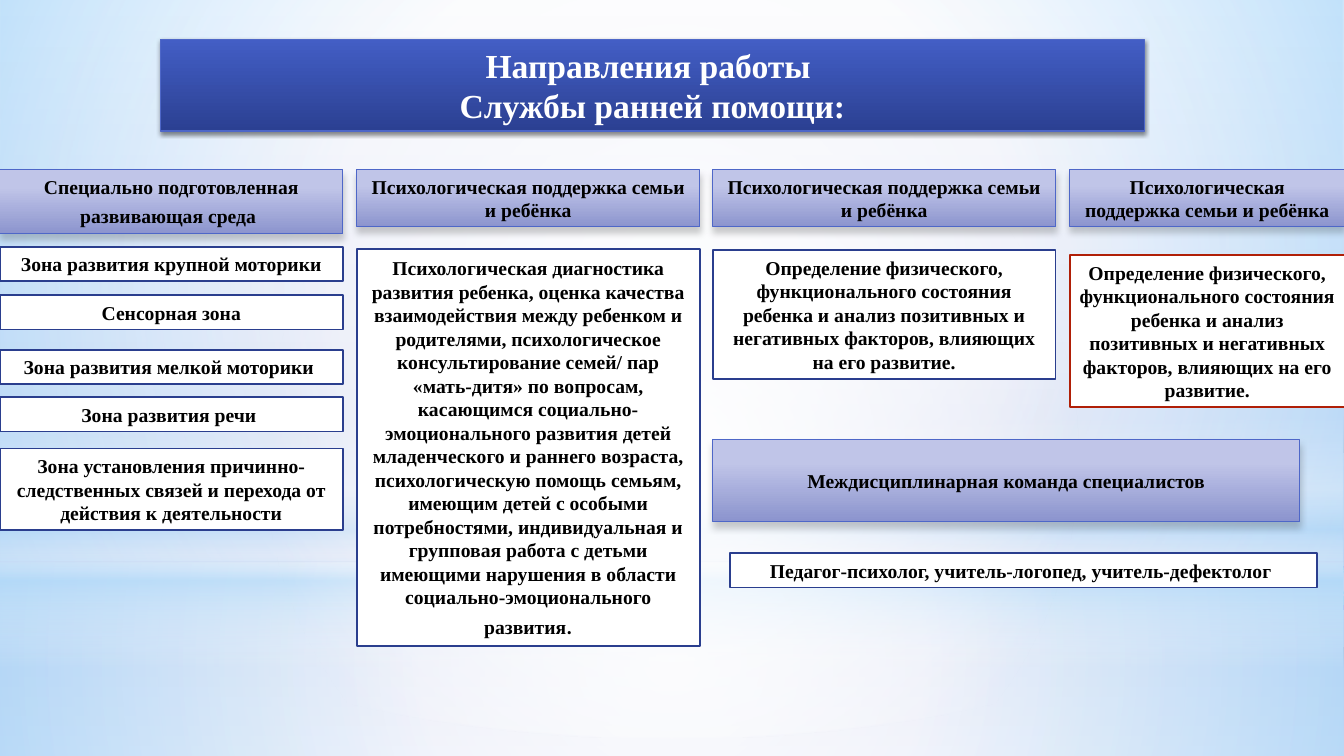
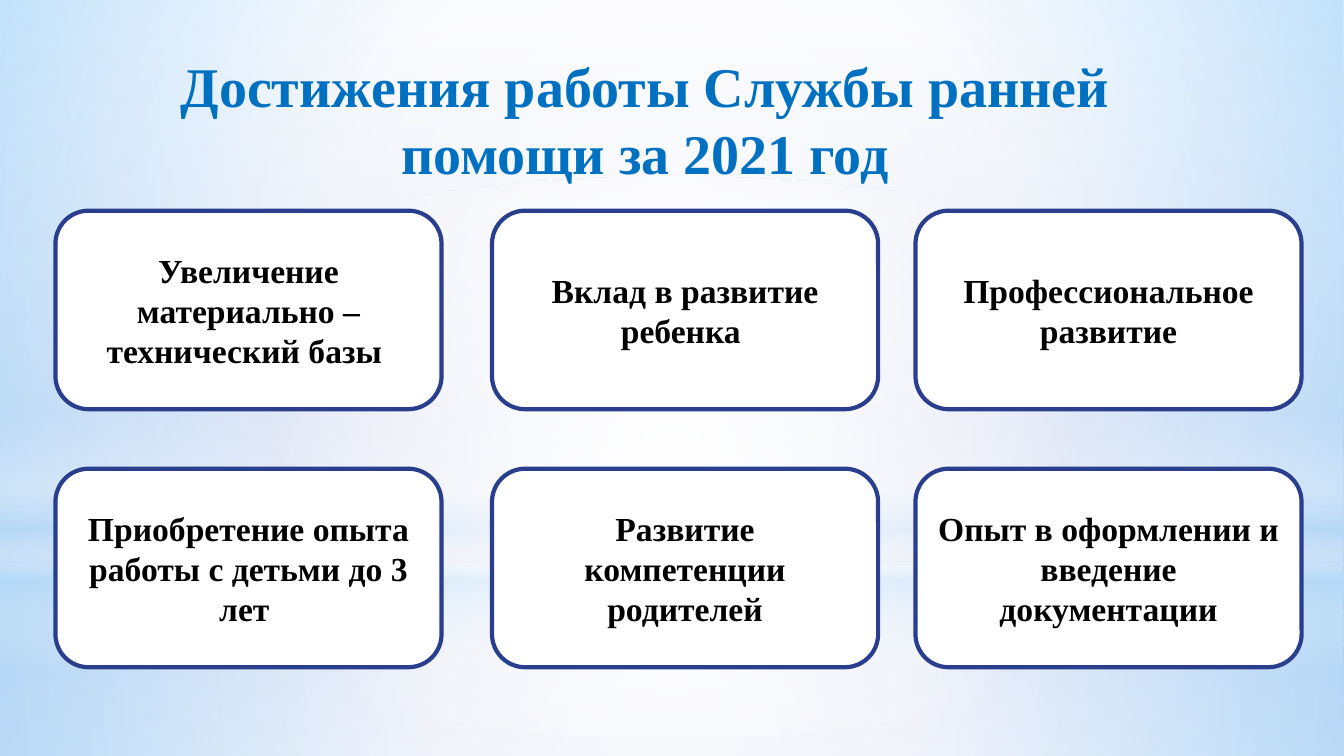
from lxml import etree
from pptx import Presentation
from pptx.dml.color import RGBColor
from pptx.enum.shapes import MSO_SHAPE
from pptx.enum.text import MSO_ANCHOR, PP_ALIGN
from pptx.oxml.ns import qn
from pptx.util import Inches, Pt

RECT, OVAL, ROUNDED = MSO_SHAPE.RECTANGLE, MSO_SHAPE.OVAL, MSO_SHAPE.ROUNDED_RECTANGLE
MIDDLE, CENTER = MSO_ANCHOR.MIDDLE, PP_ALIGN.CENTER
SERIF, SANS = "Times New Roman", "Lato"
SLIDE_W, SLIDE_H = 13.33, 7.5

COLORS = {
    "white": "FFFFFF", "black": "000000", "sky": "B4DCFA",
    "navy": "2A3E8E", "edge": "4E67C8", "red": "B01F07", "heading": "0070C0",
    "bg_top": "F6F7FC", "bg_mid": "AFBBE6", "bg_end": "CAD1EE",
    "banner_top": "435EC5", "banner_end": "2B4092",
    "head_top": "C0C5E8", "head_end": "8C94CE",
}

# Gradient stops: position %, colour, opacity %
BACKDROP = [(0, "bg_top", 100), (74, "bg_mid", 100), (83, "bg_mid", 100), (100, "bg_end", 100)]
BANNER_FILL = [(0, "banner_top", 100), (100, "banner_end", 100)]
HEAD_FILL = [(28, "head_top", 100), (100, "head_end", 100)]

# Shadows: opacity %, blur and distance in points
BANNER_SHADOW = (45, 3.1, 1.8)
HEAD_SHADOW = (20, 5, 4)

# Light on the master: outline, top, height, stops, radial
GLOWS = [
    (RECT, 5.58, 1.92, [(0, "white", 91), (37, "white", 76), (100, "sky", 79)], True),
    (RECT, 0, 5.58, [(0, "white", 89), (48, "white", 62), (100, "sky", 79)], True),
    (RECT, 4.12, 2.5, [(0, "white", 0), (29, "white", 30), (45, "sky", 40),
                       (55, "white", 26), (65, "sky", 60), (100, "white", 0)], False),
    (OVAL, 1.75, 5.58, [(0, "white", 100), (56, "white", 0)], True),
]

# Slide 1: work directions
DIRECTIONS_TITLE = "Направления работы \nСлужбы ранней помощи:"
SUPPORT = "Психологическая поддержка семьи и ребёнка"
HEALTH = ("Определение физического, функционального состояния ребенка и анализ "
          "позитивных и негативных факторов, влияющих на его развитие.")
DIAGNOSTICS = (
    "Психологическая диагностика развития ребенка, оценка качества взаимодействия "
    "между ребенком и родителями, психологическое консультирование семей/ пар "
    "«мать-дитя» по вопросам, касающимся социально-эмоционального развития детей "
    "младенческого и раннего возраста, психологическую помощь семьям, имеющим детей "
    "с особыми потребностями, индивидуальная и групповая работа с детьми имеющими "
    "нарушения в области социально-эмоционального развития")

# Each column: left, width, head (top, height, text, large ending), details with line colour
COLUMNS = [
    (0, 3.4, (1.68, 0.64, "Специально подготовленная развивающая среда", (" ", SERIF, True)), "navy", [
        (2.45, 0.34, "Зона развития крупной моторики", None),
        (2.93, 0.34, "Сенсорная зона", None),
        (3.47, 0.34, "Зона развития мелкой моторики ", None),
        (3.94, 0.34, "Зона развития речи ", None),
        (4.45, 0.81, "Зона установления причинно-следственных связей и перехода "
                     "от действия к деятельности", None)]),
    (3.54, 3.4, (1.68, 0.57, SUPPORT, None), "navy",
     [(2.47, 3.94, DIAGNOSTICS, (".", SANS, False))]),
    (7.07, 3.4, (1.68, 0.57, SUPPORT, None), "navy", [(2.48, 1.28, HEALTH, None)]),
    (10.61, 2.73, (1.68, 0.57, SUPPORT, None), "red", [(2.53, 1.51, HEALTH, None)]),
]
TEAM_HEAD = "Междисциплинарная команда специалистов"
TEAM_MEMBERS = "Педагог-психолог, учитель-логопед, учитель-дефектолог "

# Slide 2: achievements, row by row
ACHIEVEMENTS_TITLE = "Достижения работы Службы ранней помощи за 2021 год"
ACHIEVEMENTS = [
    ["Увеличение материально – технический базы ", "Вклад в развитие ребенка ",
     "Профессиональное развитие"],
    ["Приобретение опыта работы с детьми до 3 лет ", "Развитие компетенции родителей",
     "Опыт в оформлении и введение документации"],
]
CARD_LEFTS, CARD_TOPS = (0.55, 4.88, 9.08), (2.09, 4.65)
CARD_W, CARD_H = 3.83, 1.97


def rgb(name):
    return RGBColor.from_string(COLORS[name])


def add_color(parent, name, opacity):
    color = etree.SubElement(parent, qn("a:srgbClr"), val=COLORS[name])
    etree.SubElement(color, qn("a:alpha"), val=str(opacity * 1000))


def set_gradient(holder, stops, radial=False):
    """Swap the solid fill inside holder for a gradient."""
    gradient = etree.Element(qn("a:gradFill"), rotWithShape="1")
    stop_list = etree.SubElement(gradient, qn("a:gsLst"))
    for position, name, opacity in stops:
        add_color(etree.SubElement(stop_list, qn("a:gs"), pos=str(position * 1000)), name, opacity)
    if radial:
        path = etree.SubElement(gradient, qn("a:path"), path="circle")
        etree.SubElement(path, qn("a:fillToRect"), l="50000", t="50000", r="50000", b="50000")
    else:
        etree.SubElement(gradient, qn("a:lin"), ang="5400000", scaled="0")
    holder.replace(holder.find(qn("a:solidFill")), gradient)


def set_shadow(shape, opacity, blur, distance):
    effects = shape.element.spPr.find(qn("a:effectLst"))
    shadow = etree.SubElement(effects, qn("a:outerShdw"), blurRad=str(Pt(blur)),
                              dist=str(Pt(distance)), dir="5400000", rotWithShape="0")
    add_color(shadow, "black", opacity)


def add_panel(slide, outline, box, line=None, weight=1.25, stops=None, radial=False, shadow=None):
    panel = slide.shapes.add_shape(outline, *map(Inches, box))
    panel.shadow.inherit = False
    panel.fill.solid()
    panel.fill.fore_color.rgb = rgb("white")
    if line:
        panel.line.color.rgb = rgb(line)
        panel.line.width = Pt(weight)
    else:
        panel.line.fill.background()
    if stops:
        set_gradient(panel.element.spPr, stops, radial)
    if shadow:
        set_shadow(panel, *shadow)
    return panel


def format_run(run, size, color, font=SERIF, bold=True):
    run.font.size, run.font.name, run.font.bold = Pt(size), font, bold
    run.font.color.rgb = rgb(color)


def write(shape, text, size=14, color="black", ending=None):
    frame = shape.text_frame
    frame.word_wrap = True
    frame.vertical_anchor = MIDDLE
    frame.text = text
    for paragraph in frame.paragraphs:
        paragraph.alignment = CENTER
        format_run(paragraph.runs[0], size, color)
    if ending:
        mark, font, bold = ending
        run = frame.paragraphs[-1].add_run()
        run.text = mark
        format_run(run, 18, color, font, bold)


def add_head(slide, box, text, ending=None):
    head = add_panel(slide, RECT, box, "edge", 0.75, HEAD_FILL, shadow=HEAD_SHADOW)
    write(head, text, ending=ending)


def add_detail(slide, box, text, line="navy", ending=None):
    write(add_panel(slide, RECT, box, line), text, ending=ending)


def dress_master(master, slide):
    """Build the backdrop on the slide, then move it to the master."""
    master.background.fill.solid()
    master.background.fill.fore_color.rgb = rgb("white")
    set_gradient(master.element.cSld.bg.bgPr, BACKDROP)
    for number, (outline, top, height, stops, radial) in enumerate(GLOWS, start=101):
        glow = add_panel(slide, outline, (0, top, SLIDE_W, height), stops=stops, radial=radial)
        glow.element.nvSpPr.cNvPr.set("id", str(number))
        master.shapes.element.append(glow.element)


def build_directions(slide):
    banner = add_panel(slide, RECT, (1.59, 0.39, 9.76, 0.91), "edge", 0.75,
                       BANNER_FILL, shadow=BANNER_SHADOW)
    write(banner, DIRECTIONS_TITLE, 24, "white")
    for left, width, (head_top, head_height, head, head_ending), line, details in COLUMNS:
        add_head(slide, (left, head_top, width, head_height), head, head_ending)
        for top, height, text, ending in details:
            add_detail(slide, (left, top, width, height), text, line, ending)
    add_head(slide, (7.07, 4.36, 5.82, 0.81), TEAM_HEAD)
    add_detail(slide, (7.24, 5.49, 5.82, 0.34), TEAM_MEMBERS)


def build_achievements(slide):
    title = slide.shapes.add_textbox(*map(Inches, (0.75, 0.45, 11.29, 1.45)))
    write(title, ACHIEVEMENTS_TITLE, 40, "heading")
    for top, row in zip(CARD_TOPS, ACHIEVEMENTS):
        for left, text in zip(CARD_LEFTS, row):
            card = add_panel(slide, ROUNDED, (left, top, CARD_W, CARD_H), "navy", 3)
            write(card, text, 24)


def main():
    prs = Presentation()
    prs.slide_width, prs.slide_height = Inches(SLIDE_W), Inches(SLIDE_H)
    blank = prs.slide_layouts[6]
    directions, achievements = (prs.slides.add_slide(blank) for _ in range(2))
    dress_master(prs.slide_master, directions)
    build_directions(directions)
    build_achievements(achievements)
    prs.save("out.pptx")


if __name__ == "__main__":
    main()
